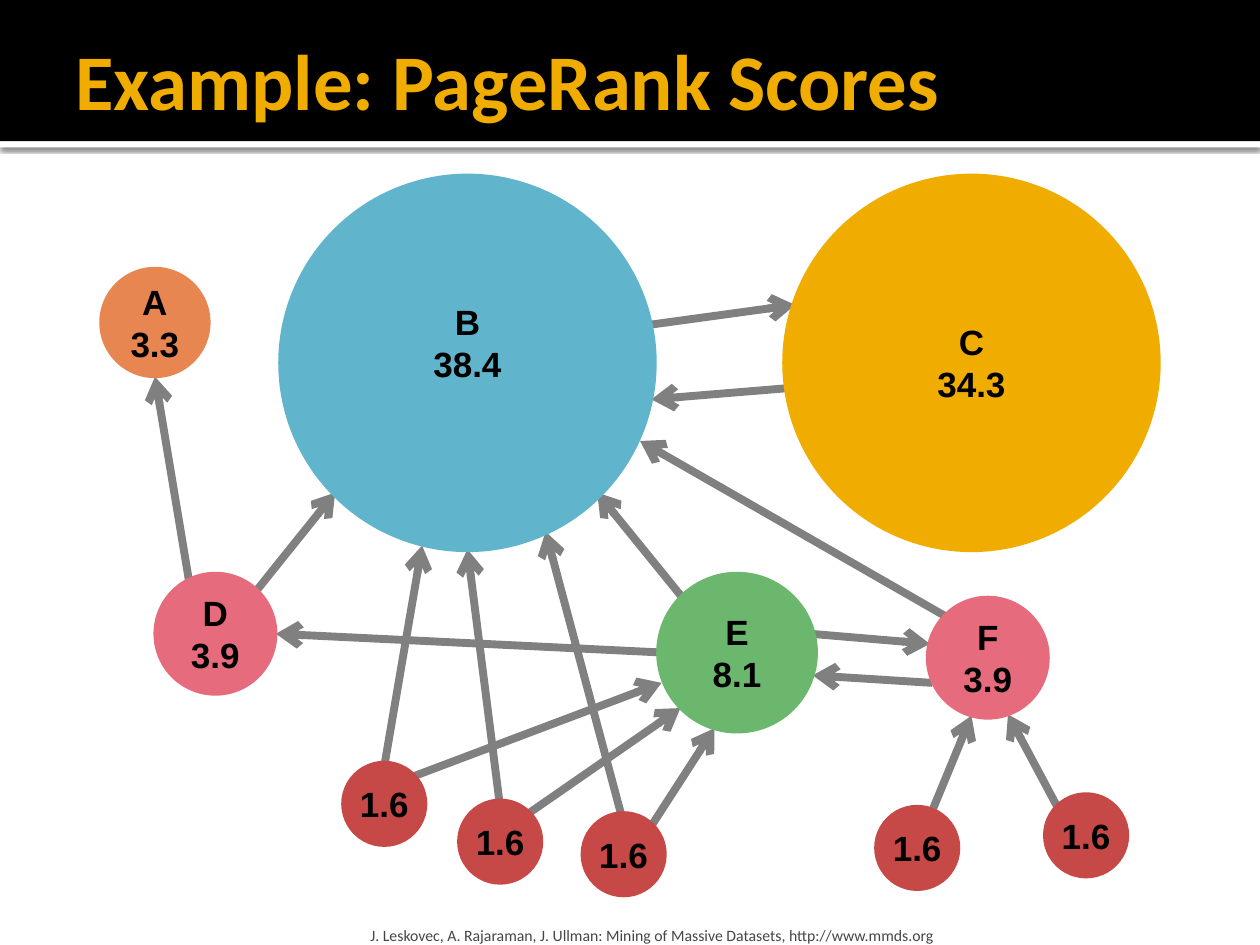
import pptx
import pptx.util
import pptx.dml.color
import pptx.enum.shapes
import pptx.enum.text
import pptx.oxml
import pptx.oxml.ns

Inches = pptx.util.Inches
Align = pptx.enum.text.PP_ALIGN
Anchor = pptx.enum.text.MSO_ANCHOR
Shape = pptx.enum.shapes.MSO_SHAPE

TITLE_FONT = {"name": "Calibri", "size": pptx.util.Pt(45), "bold": True}
NODE_FONT = {"name": "Arial", "size": pptx.util.Pt(20), "bold": True}
FOOTER_FONT = {"name": "Calibri", "size": pptx.util.Pt(9), "bold": False}

# Text lines, left, top, diameter, colour
NODES = [
    (["B", "38.4"], 2.25, 1.42, 2.92, "60B5CC"),
    (["C", "34.3"], 6.25, 1.42, 2.92, "F0AD00"),
    (["E", "8.1"], 5.25, 4.58, 1.2, "6BB76D"),
    (["F", "3.9"], 7.39, 4.77, 0.9, "E66C7D"),
    (["D", "3.9"], 1.26, 4.58, 0.9, "E66C7D"),
    (["A", "3.3"], 0.83, 2.16, 0.8, "E88651"),
]
SMALL_NODES = [(2.75, 6.08), (3.67, 6.38), (4.65, 6.48), (6.98, 6.43), (8.32, 6.33)]

# Start x, start y, end x, end y of each link
LINKS = [
    (5.14, 2.58, 6.31, 2.42),  # B to C
    (6.26, 3.08, 5.17, 3.17),  # C to B
    (5.43, 4.76, 4.74, 3.91),  # E to B
    (2.01, 4.72, 2.66, 3.91),  # D to B
    (1.5, 4.61, 1.23, 2.99),   # D to A
    (3.05, 6.08, 3.35, 4.33),  # small nodes to B and E
    (3.26, 6.17, 5.25, 5.42),
    (5.28, 5.18, 2.19, 5.03),  # E to D
    (3.97, 6.41, 3.71, 4.36),  # small nodes to B and E
    (4.16, 6.48, 5.4, 5.62),
    (5.16, 6.57, 5.67, 5.78),
    (4.95, 6.54, 4.33, 4.22),
    (7.38, 6.48, 7.71, 5.68),  # small nodes to F
    (8.4, 6.42, 8, 5.67),
    (7.52, 4.9, 5.08, 3.5),    # F to B
    (7.4, 5.42, 6.45, 5.36),   # F to E
    (6.43, 5.03, 7.38, 5.11),  # E to F
]


def color(value):
    return pptx.dml.color.RGBColor.from_string(value)


def xml(text):
    return pptx.oxml.parse_xml(text.replace(">", " " + pptx.oxml.ns.nsdecls("a") + ">", 1))


def write_text(shape, lines, font, text_color, insets, **frame_format):
    frame = shape.text_frame
    sides = ("margin_left", "margin_top", "margin_right", "margin_bottom")
    frame_format.update(zip(sides, map(Inches, insets)))
    for name, value in frame_format.items():
        setattr(frame, name, value)
    for index, line in enumerate(lines):
        para = frame.add_paragraph() if index else frame.paragraphs[0]
        para.alignment = Align.LEFT
        span = para.add_run()
        span.text = line
        for name, value in font.items():
            setattr(span.font, name, value)
        span.font.color.rgb = color(text_color)


def add_band(page, top, height, fill):
    band = page.shapes.add_shape(Shape.RECTANGLE, 0, Inches(top), Inches(10), Inches(height))
    band.shadow.inherit = False
    band.fill.solid()
    band.fill.fore_color.rgb = color(fill)
    band.line.fill.background()
    return band


def add_title(page, text):
    title = page.shapes.title
    title.left, title.top, title.width, title.height = map(Inches, (0.5, 0.17, 9, 0.92))
    write_text(title, [text], TITLE_FONT, "F0AD00", (0.1, 0.05, 0.05, 0.05),
               vertical_anchor=Anchor.MIDDLE, word_wrap=True)
    # Bring the title in front of the bands
    title.element.getparent().append(title.element)


def add_link(page, ends):
    link = page.shapes.add_connector(pptx.enum.shapes.MSO_CONNECTOR.STRAIGHT, *map(Inches, ends))
    link.line.color.rgb = color("808080")
    link.line.width = pptx.util.Pt(4.5)
    link.line._get_or_add_ln().append(xml('<a:tailEnd type="arrow"/>'.replace("/>", "></a:tailEnd>")))
    link.element.spPr.append(xml("<a:effectLst></a:effectLst>"))


def add_node(page, lines, left, top, diameter, fill, bottom_inset=0):
    node = page.shapes.add_shape(Shape.OVAL, *map(Inches, (left, top, diameter, diameter)))
    node.shadow.inherit = False
    node.fill.solid()
    node.fill.fore_color.rgb = color(fill)
    node.line.color.rgb = color(fill)
    node.line.width = pptx.util.Pt(6)
    write_text(node, lines, NODE_FONT, "000000", (0, 0, 0, bottom_inset),
               vertical_anchor=Anchor.MIDDLE, word_wrap=False)
    for para in node.text_frame.paragraphs:
        para.alignment = Align.CENTER


def add_footer(page, text):
    box = page.shapes.add_textbox(*map(Inches, (2.89, 7.2, 6.02, 0.3)))
    write_text(box, [text], FOOTER_FONT, "454545", (0.05, 0.05, 0.05, 0),
               vertical_anchor=Anchor.BOTTOM, word_wrap=True)


def main():
    deck = pptx.Presentation()
    deck.slide_width, deck.slide_height = Inches(10), Inches(7.5)
    page = deck.slides.add_slide(deck.slide_layouts[5])

    # Header: white strip with a soft shadow, black band, title
    strip = add_band(page, 1.12, 0.05, "FFFFFF")
    strip.element.spPr.find(pptx.oxml.ns.qn("a:effectLst")).append(xml(
        '<a:outerShdw blurRad="31750" dist="10160" dir="5400000" algn="tl" rotWithShape="0">'
        '<a:srgbClr val="000000"><a:alpha val="60000"/></a:srgbClr></a:outerShdw>'))
    add_band(page, 0, 1.12, "000000")
    add_title(page, "Example: PageRank Scores")

    # Graph: links behind nodes
    for ends in LINKS:
        add_link(page, ends)
    for node in NODES:
        # The text of B sits half a line above the centre
        add_node(page, *node, bottom_inset=0.33 if node[0][0] == "B" else 0)
    for left, top in SMALL_NODES:
        add_node(page, ["1.6"], left, top, 0.6, "C64847")

    add_footer(page, "J. Leskovec, A. Rajaraman, J. Ullman: Mining of Massive Datasets, "
                     "http://www.mmds.org")
    deck.save("out.pptx")


if __name__ == "__main__":
    main()
